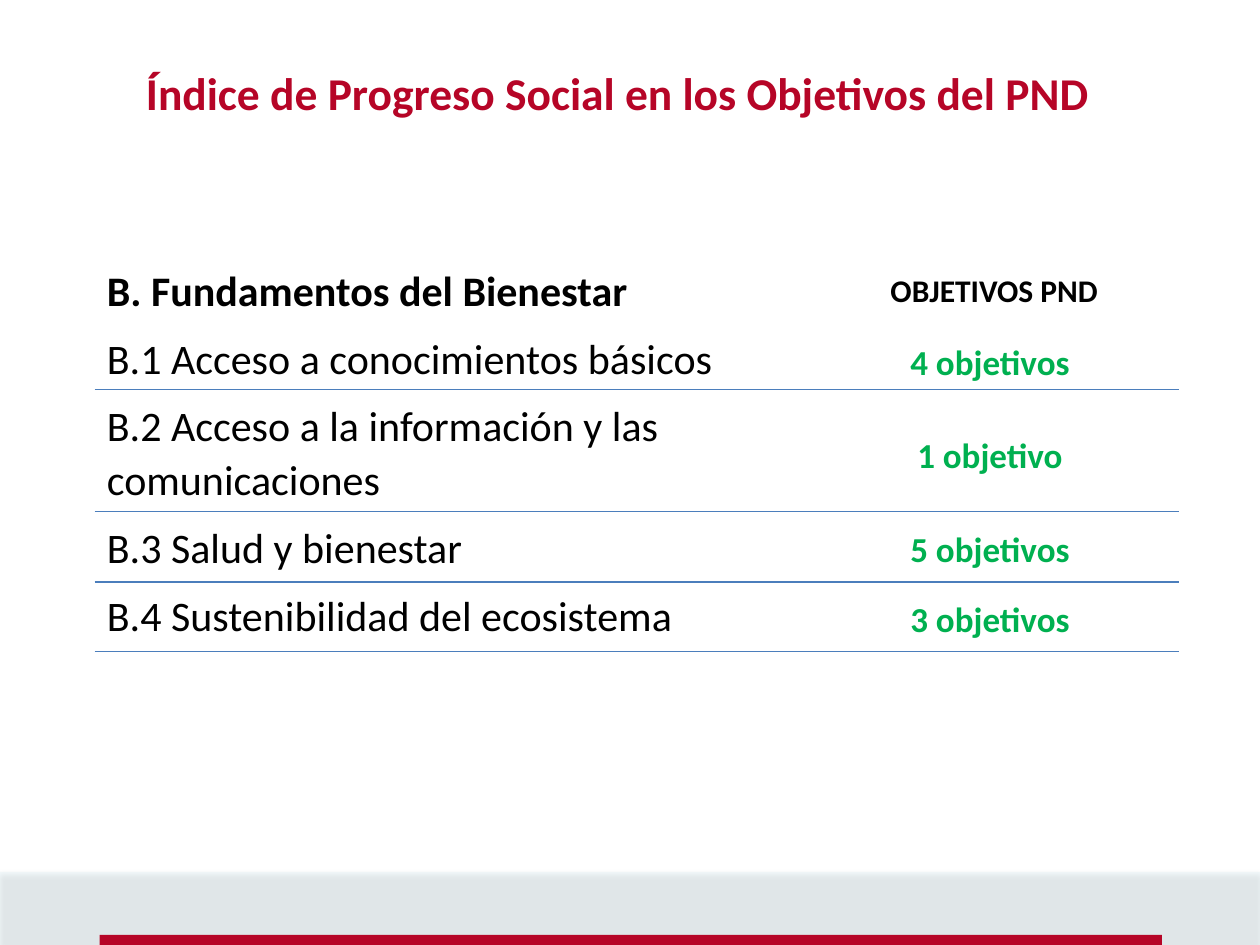
from lxml import etree
from pptx import Presentation
from pptx.dml.color import RGBColor
from pptx.enum.shapes import MSO_CONNECTOR, MSO_SHAPE
from pptx.enum.text import MSO_AUTO_SIZE
from pptx.oxml.ns import qn
from pptx.util import Pt

RECTANGLE = MSO_SHAPE.RECTANGLE
STRAIGHT = MSO_CONNECTOR.STRAIGHT
FIT_SHAPE = MSO_AUTO_SIZE.SHAPE_TO_FIT_TEXT
NO_FIT = MSO_AUTO_SIZE.NONE

# Content
TITLE = "Índice de Progreso Social en los Objetivos del PND"
SECTION = "B. Fundamentos del Bienestar"
COLUMN_HEADING = "OBJETIVOS PND"
# topic, count, top of count, width of count, rule below
ROWS = [
    ("B.1 Acceso a conocimientos básicos", "4 objetivos", 190.8, 106.6, 222.5),
    ("B.2 Acceso a la información y las comunicaciones", "1 objetivo", 244.1, 98.6, 292.3),
    ("B.3 Salud y bienestar", "5 objetivos", 298.1, 106.6, 332.6),
    ("B.4 Sustenibilidad del ecosistema", "3 objetivos", 337.7, 106.6, 372.2),
]

# Layout and formats
TABLE_LEFT, TABLE_RIGHT = 54, 674
COUNT_CENTER = 566.4
RED, BAND, BLACK, GREEN, BLUE = "B60527", "DBEEF4", "000000", "00B050", "4B7EBC"
TITLE_FONT = {"size": Pt(26), "bold": True}
SECTION_FONT = {"size": Pt(24), "bold": True}
TOPIC_FONT = {"size": Pt(24), "bold": False}
HEADING_FONT = {"size": Pt(18), "bold": True}
COUNT_FONT = {"size": Pt(20), "bold": True}
TITLE_SPACING = {"line_spacing": 0.9}
TOPIC_SPACING = {"line_spacing": 1.07, "space_after": Pt(8)}


def color(value):
    return RGBColor.from_string(value)


def set_values(target, values):
    for name, value in values.items():
        setattr(target, name, value)


def add_bar(page, left, top, width, height, fill):
    bar = page.shapes.add_shape(RECTANGLE, Pt(left), Pt(top), Pt(width), Pt(height))
    bar.shadow.inherit = False
    bar.fill.solid()
    bar.fill.fore_color.rgb = color(fill)
    bar.line.fill.background()
    return bar


def add_alpha(color_element, percent):
    etree.SubElement(color_element, qn("a:alpha"), val=str(percent * 1000))


def add_text(page, left, top, width, height, lines, ink, spacing=None, wrap=True, fit=FIT_SHAPE):
    box = page.shapes.add_textbox(Pt(left), Pt(top), Pt(width), Pt(height))
    frame = box.text_frame
    frame.word_wrap = wrap
    frame.auto_size = fit
    for index, (text, font) in enumerate(lines):
        para = frame.add_paragraph() if index else frame.paragraphs[0]
        set_values(para, spacing or {})
        span = para.add_run()
        span.text = text
        set_values(span.font, {"name": "Calibri", **font})
        span.font.color.rgb = color(ink)


def add_rule(page, y):
    rule = page.shapes.add_connector(STRAIGHT, Pt(TABLE_LEFT), Pt(y), Pt(TABLE_RIGHT), Pt(y))
    rule.line.color.rgb = color(BLUE)
    rule.line.width = Pt(0.75)
    etree.SubElement(rule._element.spPr, qn("a:effectLst"))


def main():
    deck = Presentation()
    deck.slide_width, deck.slide_height = Pt(720), Pt(540)
    page = deck.slides.add_slide(deck.slide_layouts[6])

    # Footer: translucent band with a soft shadow, then the red bar
    band = add_bar(page, 0, 498.2, 720, 41.8, BAND)
    properties = band._element.spPr
    add_alpha(properties.find(qn("a:solidFill")).find(qn("a:srgbClr")), 32)
    shadow = etree.SubElement(
        properties.find(qn("a:effectLst")), qn("a:outerShdw"),
        blurRad=str(Pt(3.1)), dist=str(Pt(1.8)), dir="5400000", rotWithShape="0")
    add_alpha(etree.SubElement(shadow, qn("a:srgbClr"), val=BLACK), 35)
    add_bar(page, 57, 534.2, 607, 18, RED)

    # Title and topics
    add_text(page, 76.3, 37.4, 622, 45.4, [(TITLE, TITLE_FONT)], RED, TITLE_SPACING, fit=NO_FIT)
    topics = [(SECTION, SECTION_FONT)] + [(row[0], TOPIC_FONT) for row in ROWS]
    add_text(page, TABLE_LEFT, 145.4, 425.5, 226, topics, BLACK, TOPIC_SPACING)

    # Column of counts with the rules below the rows
    add_text(page, 501.8, 151.2, 133.9, 29, [(COLUMN_HEADING, HEADING_FONT)], BLACK, wrap=False)
    for _, count, top, width, rule_y in ROWS:
        add_text(page, COUNT_CENTER - width / 2, top, width, 31.5,
                 [(count, COUNT_FONT)], GREEN, wrap=False)
        add_rule(page, rule_y)

    deck.save("out.pptx")


if __name__ == "__main__":
    main()
